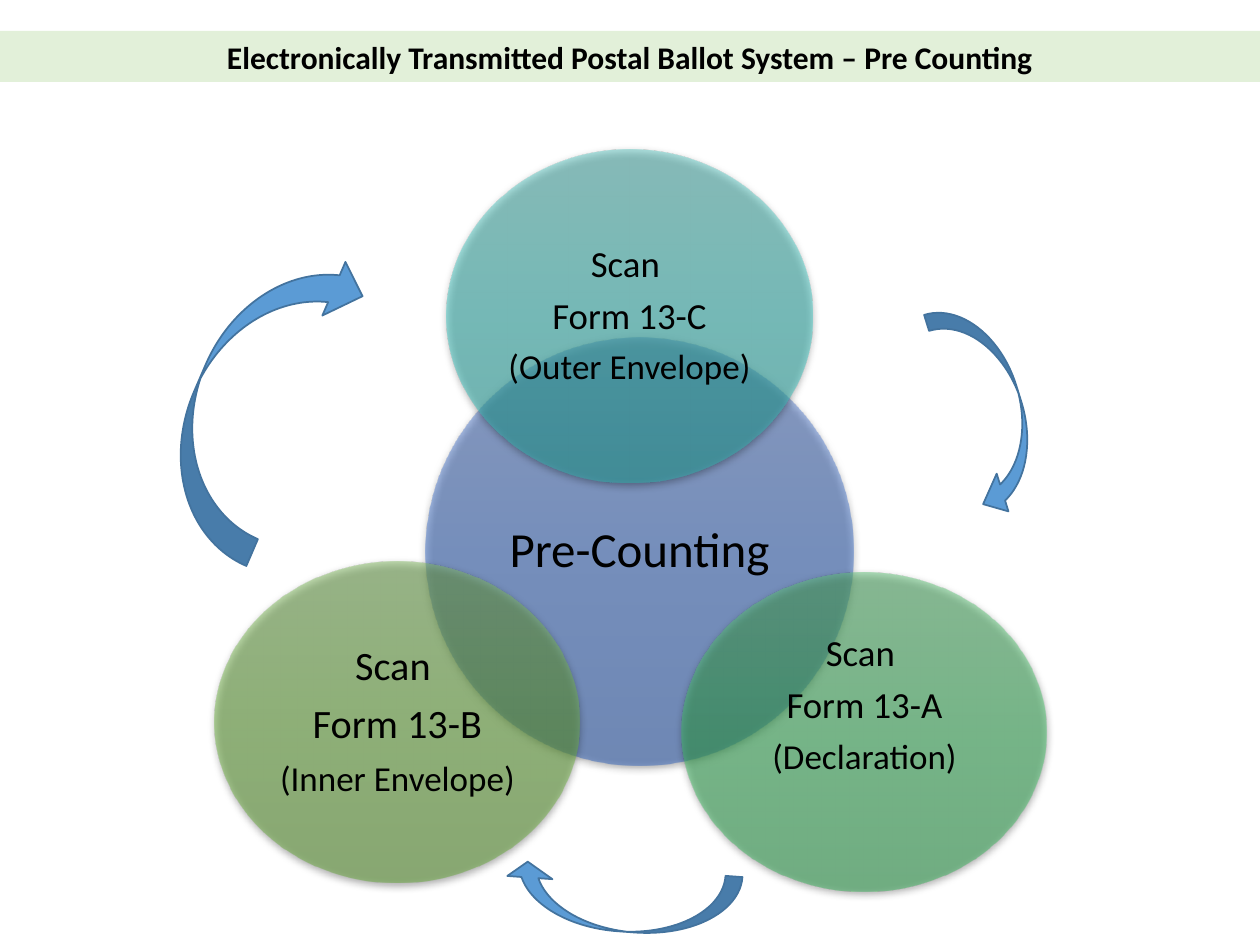
from lxml import etree
from pptx import Presentation
from pptx.dml.color import RGBColor
from pptx.enum.shapes import MSO_SHAPE as Shape
from pptx.enum.text import MSO_ANCHOR as Anchor, PP_ALIGN as Align
from pptx.oxml import parse_xml
from pptx.oxml.ns import nsdecls, qn
from pptx.util import Emu, Pt

SCALE = 914400 / 126


def px(n):
    return Emu(round(n * SCALE))


def color(code):
    return RGBColor.from_string(code)


def add_shape(slide, kind, box):
    shape = slide.shapes.add_shape(kind, *map(px, box))
    shape.shadow.inherit = False
    shape.line.fill.background()
    return shape


def style(par, size, bold=False):
    par.alignment = Align.CENTER
    for run in par.runs:
        font = run.font
        font.name, font.size, font.bold = "Calibri", Pt(size), bold
        font.color.rgb = color("000000")


def add_title(slide, text):
    bar = add_shape(slide, Shape.RECTANGLE, (0, 31, 1260, 51))
    bar.fill.solid()
    bar.fill.fore_color.rgb = color("E2F0D9")
    frame = bar.text_frame
    frame.word_wrap = True
    frame.vertical_anchor = Anchor.MIDDLE
    frame.text = text
    style(frame.paragraphs[0], 18, True)


def add_disc(slide, box, shades):
    disc = add_shape(slide, Shape.OVAL, box)
    disc.fill.gradient()
    disc.fill.gradient_angle = 270
    stops = disc.element.spPr.find(qn("a:gradFill")).find(qn("a:gsLst"))
    for stop in list(stops):
        stops.remove(stop)
    for i, shade in enumerate(shades):
        stops.append(parse_xml(
            f'<a:gs {nsdecls("a")} pos="{i * 50000}"><a:srgbClr val="{shade}">'
            '<a:alpha val="50000"/></a:srgbClr></a:gs>'))
    effects = disc.element.spPr.find(qn("a:effectLst"))
    shadow = etree.SubElement(effects, qn("a:outerShdw"), blurRad=str(Pt(4.5)),
                              dist=str(Pt(1.5)), dir="5400000", algn="ctr",
                              rotWithShape="0")
    tint = etree.SubElement(shadow, qn("a:srgbClr"), val="000000")
    etree.SubElement(tint, qn("a:alpha"), val="63000")


def add_label(slide, box, lines, lift):
    left, top, width, height = box
    inner = (left + width * 0.15, top + height * 0.15 - lift,
             width * 0.7, height * 0.7)
    frame = slide.shapes.add_textbox(*map(px, inner)).text_frame
    frame.word_wrap = True
    frame.vertical_anchor = Anchor.MIDDLE
    frame.margin_left = frame.margin_right = px(4)
    frame.margin_top = frame.margin_bottom = px(4)
    frame.text = "\n".join(text for text, size in lines)
    for par, (text, size) in zip(frame.paragraphs, lines):
        style(par, size)
        par.line_spacing = 0.9
        par.space_after = Pt(round(size * 0.35))


def add_arrow(slide, kind, box, turn, bends, flip=False):
    arrow = add_shape(slide, kind, box)
    arrow.rotation = turn
    for i, bend in enumerate(bends):
        arrow.adjustments[i] = bend
    arrow.fill.solid()
    arrow.fill.fore_color.rgb = color("5B9BD5")
    arrow.line.color.rgb = color("43739E")
    arrow.line.width = Pt(1)
    if flip:
        arrow.element.spPr.find(qn("a:xfrm")).set("flipH", "1")


def main():
    deck = Presentation()
    deck.slide_width, deck.slide_height = px(1260), px(945)
    slide = deck.slides.add_slide(deck.slide_layouts[6])
    add_title(slide, "Electronically Transmitted Postal Ballot System – Pre Counting")

    discs = [
        ((426, 338, 427, 427), ("6183CB", "3E70CA", "3062BB"),
         [("Pre-Counting", 28)], 0),
        ((447, 150, 365, 333), ("60C6C1", "3DC4BF", "30B5B0"),
         [("Scan ", 21), ("Form 13-C", 21), ("(Outer Envelope)", 20)], 0),
        ((682, 573, 365, 318), ("60C077", "3FBC62", "33AC55"),
         [("Scan ", 21), ("Form 13-A", 21), ("(Declaration)", 20)], 26),
        ((215, 562, 365, 321), ("81B861", "6FB242", "62A336"),
         [("Scan ", 23), ("Form 13-B", 23), ("(Inner Envelope)", 20)], 0),
    ]
    for box, shades, lines, lift in discs:
        add_disc(slide, box, shades)
        add_label(slide, box, lines, lift)

    left, right = Shape.CURVED_LEFT_ARROW, Shape.CURVED_RIGHT_ARROW
    add_arrow(slide, left, (955, 300, 67, 218), 342.7, (0.25, 0.59, 0.33))
    add_arrow(slide, left, (590, 781, 63, 238), 94.1, (0.27, 0.72, 0.25))
    add_arrow(slide, right, (198, 233, 117, 323), 203.3, (0.25, 0.5, 0.25), True)
    deck.save("out.pptx")


if __name__ == "__main__":
    main()
